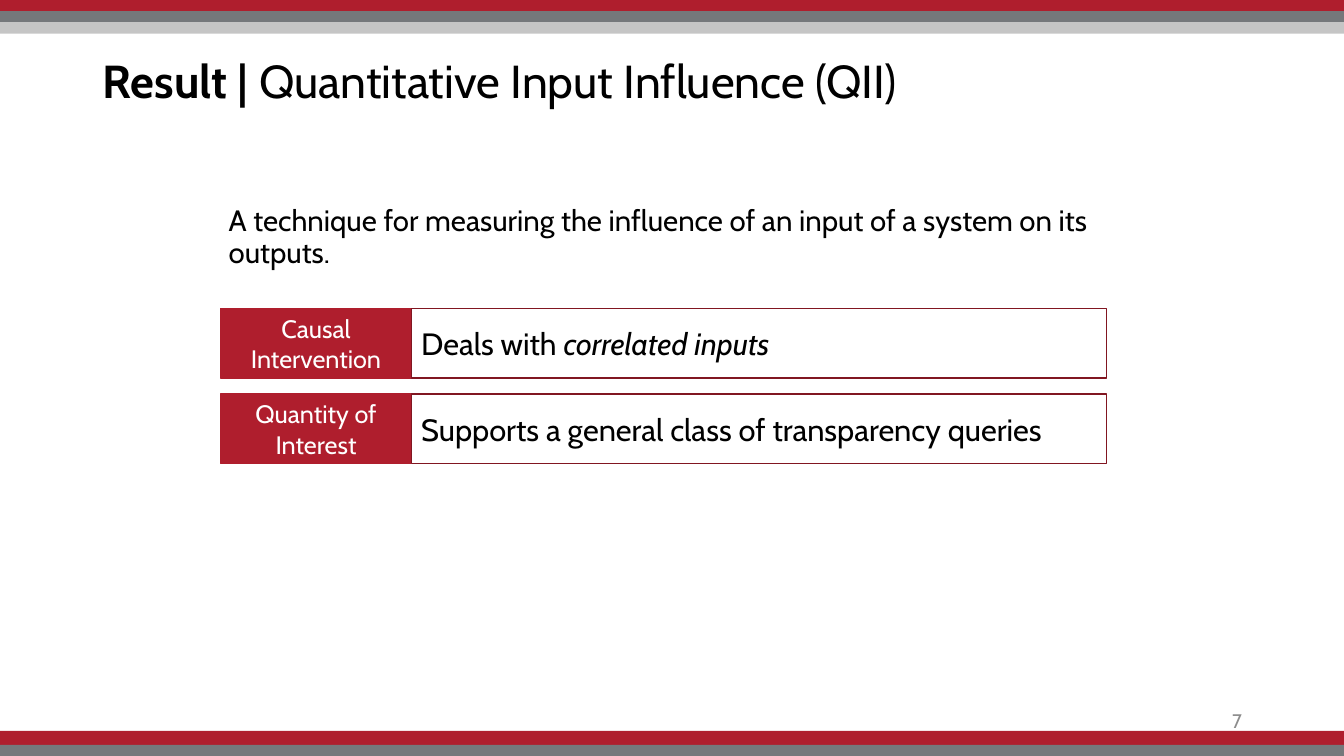
from dataclasses import dataclass

from pptx import Presentation
from pptx.dml.color import RGBColor
from pptx.enum.shapes import MSO_SHAPE
from pptx.enum.text import MSO_ANCHOR, PP_ALIGN
from pptx.util import Inches, Pt

COLUMNS, ROWS = 160, 90
PAGE_WIDTH, PAGE_HEIGHT = Inches(13.33), Inches(7.5)


@dataclass(frozen=True)
class Theme:
    font: str = "Cabin"
    red: str = "AF1E2D"
    dark_red: str = "811621"
    dark_gray: str = "75787B"
    light_gray: str = "C5C5C5"
    number_gray: str = "8C8C8C"
    black: str = "000000"
    white: str = "FFFFFF"
    title_size: int = 33
    intro_size: int = 21
    label_size: int = 18
    claim_size: int = 22
    number_size: int = 14


@dataclass(frozen=True)
class Area:
    column: float
    row: float
    columns: float
    rows: float

    def lengths(self) -> tuple:
        across, down = PAGE_WIDTH / COLUMNS, PAGE_HEIGHT / ROWS
        return (round(self.column * across), round(self.row * down),
                round(self.columns * across), round(self.rows * down))


@dataclass(frozen=True)
class Span:
    text: str
    bold: bool = False
    italic: bool = False


@dataclass(frozen=True)
class Style:
    size: int
    color: str
    align: PP_ALIGN = PP_ALIGN.LEFT
    anchor: MSO_ANCHOR = MSO_ANCHOR.MIDDLE
    line_spacing: float = 1.0
    space_before: float = 0


@dataclass(frozen=True)
class Stripe:
    row: float
    rows: float
    color: str


@dataclass(frozen=True)
class Feature:
    label: str
    claim: tuple


THEME = Theme()
TITLE = Style(THEME.title_size, THEME.black, line_spacing=0.9)
INTRO = Style(THEME.intro_size, THEME.black, anchor=MSO_ANCHOR.TOP,
              line_spacing=0.9, space_before=7.5)
LABEL = Style(THEME.label_size, THEME.white, PP_ALIGN.CENTER)
CLAIM = Style(THEME.claim_size, THEME.black)
NUMBER = Style(THEME.number_size, THEME.number_gray, PP_ALIGN.RIGHT)

STRIPES = (
    Stripe(0, 1.32, THEME.red),
    Stripe(1.32, 1.32, THEME.dark_gray),
    Stripe(2.64, 1.38, THEME.light_gray),
    Stripe(87, 1.8, THEME.red),
    Stripe(88.68, 1.32, THEME.dark_gray),
)
FEATURES = (
    Feature("Causal Intervention",
            (Span("Deals with "), Span("correlated inputs", italic=True))),
    Feature("Quantity of Interest",
            (Span("Supports a general class of transparency queries"),)),
)
FEATURE_LEFT, FEATURE_TOP, FEATURE_ROWS, FEATURE_PITCH = 26.28, 36.72, 8.28, 10.2
LABEL_COLUMNS, CLAIM_COLUMNS = 22.68, 82.8


def write(box, spans: tuple, style: Style) -> None:
    frame = box.text_frame
    frame.word_wrap = True
    frame.vertical_anchor = style.anchor
    para = frame.paragraphs[0]
    para.alignment = style.align
    para.line_spacing = style.line_spacing
    para.space_before = Pt(style.space_before)
    for span in spans:
        run = para.add_run()
        run.text = span.text
        run.font.name = THEME.font
        run.font.size = Pt(style.size)
        run.font.bold = span.bold
        run.font.italic = span.italic
        run.font.color.rgb = RGBColor.from_string(style.color)


def add_box(page, area: Area, fill: str, line: str = ""):
    box = page.shapes.add_shape(MSO_SHAPE.RECTANGLE, *area.lengths())
    box.shadow.inherit = False
    box.fill.solid()
    box.fill.fore_color.rgb = RGBColor.from_string(fill)
    if line:
        box.line.color.rgb = RGBColor.from_string(line)
        box.line.width = Pt(1)
    else:
        box.line.fill.background()
    return box


def add_text(page, area: Area, text: str, style: Style) -> None:
    write(page.shapes.add_textbox(*area.lengths()), (Span(text),), style)


def add_title(page, area: Area, spans: tuple) -> None:
    title = page.shapes.title
    title.left, title.top, title.width, title.height = area.lengths()
    write(title, spans, TITLE)


def add_feature(page, index: int, feature: Feature) -> None:
    row = FEATURE_TOP + index * FEATURE_PITCH
    label_area = Area(FEATURE_LEFT, row, LABEL_COLUMNS, FEATURE_ROWS)
    claim_area = Area(FEATURE_LEFT + LABEL_COLUMNS, row, CLAIM_COLUMNS, FEATURE_ROWS)
    label = add_box(page, label_area, THEME.red, THEME.red)
    write(label, (Span(feature.label),), LABEL)
    claim = add_box(page, claim_area, THEME.white, THEME.dark_red)
    write(claim, feature.claim, CLAIM)


def main() -> None:
    deck = Presentation()
    deck.slide_width, deck.slide_height = PAGE_WIDTH, PAGE_HEIGHT
    page = deck.slides.add_slide(deck.slide_layouts.get_by_name("Title Only"))
    for stripe in STRIPES:
        add_box(page, Area(0, stripe.row, COLUMNS, stripe.rows), stripe.color)
    add_title(page, Area(11.04, 1.2, 138, 17.4),
              (Span("Result |", bold=True), Span(" Quantitative Input Influence (QII)")))
    add_text(page, Area(113.04, 83.4, 36, 4.8), "7", NUMBER)
    add_text(page, Area(26.04, 24, 105.72, 57.12),
             "A technique for measuring the influence of an input of a system on its outputs.",
             INTRO)
    for index, feature in enumerate(FEATURES):
        add_feature(page, index, feature)
    deck.save("out.pptx")


if __name__ == "__main__":
    main()
